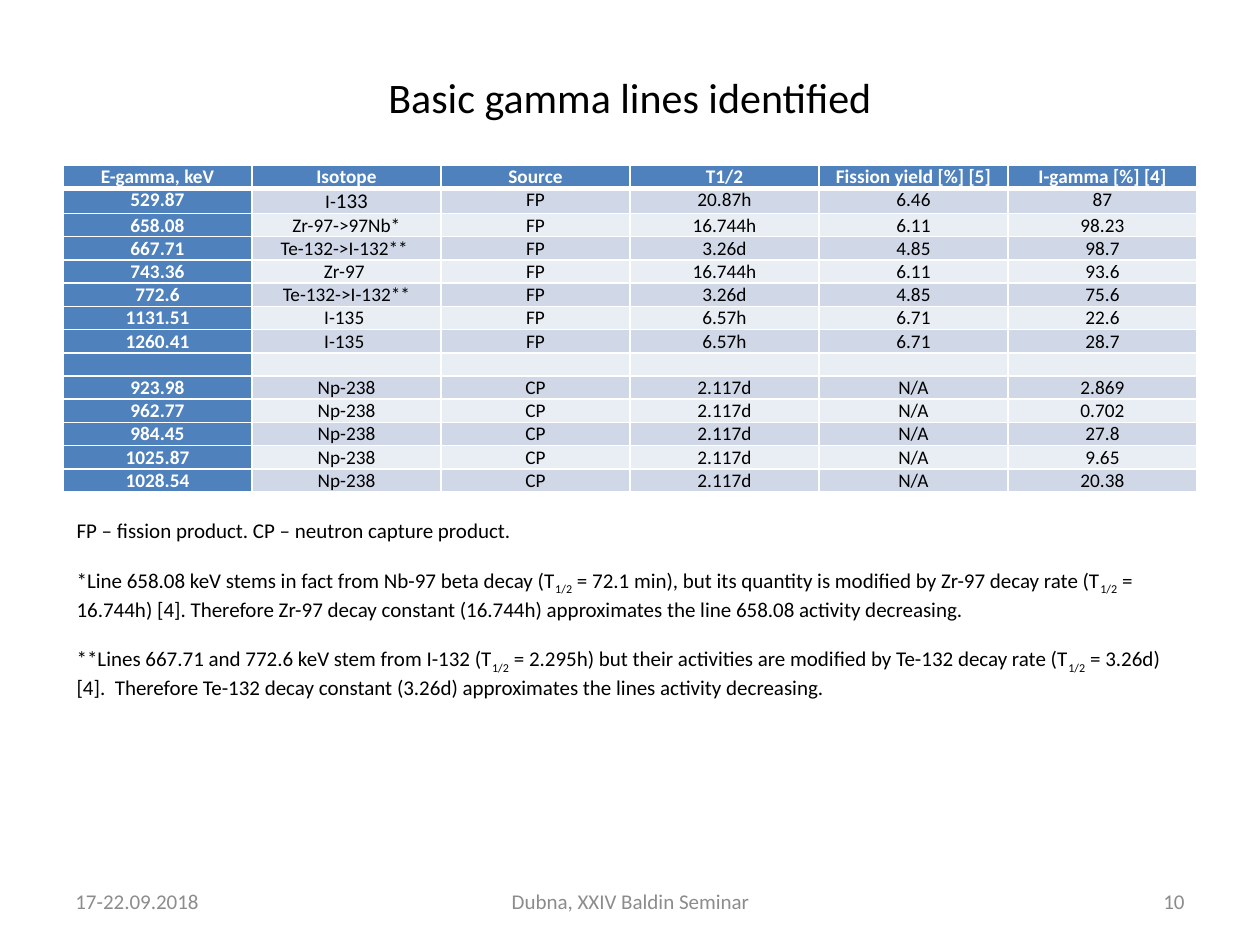
import pptx
import pptx.dml.color
import pptx.enum.text
import pptx.oxml.ns
import pptx.util
from lxml import etree

Inches = pptx.util.Inches
ALIGN = pptx.enum.text.PP_ALIGN
ANCHOR = pptx.enum.text.MSO_ANCHOR
THEME = {
    "font": "Calibri",
    "ink": "000000", "white": "FFFFFF", "muted": "8C8C8C",
    "accent": "4F81BD", "bands": ("D0D8E8", "E9EDF4"),
    "title": 24, "body": 12, "cell": 11,
}


def write(para, text, size=THEME["body"], color=THEME["ink"], bold=False,
          align=ALIGN.LEFT, marked_size=None, marked_baseline=None):
    para.alignment = align
    for index, piece in enumerate(text.split("|")):
        span = para.add_run()
        span.text = piece
        marked = index % 2 == 1
        span.font.name = THEME["font"]
        span.font.size = pptx.util.Pt(marked_size if marked and marked_size else size)
        span.font.bold = bold
        span.font.color.rgb = pptx.dml.color.RGBColor.from_string(color)
        if marked and marked_baseline:
            span.font._element.set("baseline", str(marked_baseline))


def add_border(cell, side, width):
    line = etree.SubElement(cell._tc.get_or_add_tcPr(), pptx.oxml.ns.qn(f"a:{side}"),
                            w=str(pptx.util.Pt(width)))
    fill = etree.SubElement(line, pptx.oxml.ns.qn("a:solidFill"))
    etree.SubElement(fill, pptx.oxml.ns.qn("a:srgbClr"), val=THEME["white"])


deck = pptx.Presentation()
deck.slide_width, deck.slide_height = Inches(10), Inches(7.5)
page = deck.slides.add_slide(deck.slide_layouts[6])

labels = [
    ("Basic gamma lines identified", 0.5, 0.3, 9, 0.93, THEME["title"], THEME["ink"], ALIGN.CENTER),
    ("17-22.09.2018", 0.5, 6.95, 2.33, 0.4, THEME["body"], THEME["muted"], ALIGN.LEFT),
    ("Dubna, XXIV Baldin Seminar", 3.42, 6.95, 3.17, 0.4, THEME["body"], THEME["muted"], ALIGN.CENTER),
    ("10", 7.17, 6.95, 2.33, 0.4, THEME["body"], THEME["muted"], ALIGN.RIGHT),
]
for text, left, top, width, height, size, color, align in labels:
    box = page.shapes.add_textbox(Inches(left), Inches(top), Inches(width), Inches(height))
    box.text_frame.word_wrap = True
    box.text_frame.vertical_anchor = ANCHOR.MIDDLE
    write(box.text_frame.paragraphs[0], text, size=size, color=color, align=align)

gamma_lines = [
    ("E-gamma, keV", "Isotope", "Source", "T1/2", "Fission yield [%] [5]", "I-gamma [%] [4]"),
    ("529.87", "I-|133", "FP", "20.87h", "6.46", "87"),
    ("658.08", "Zr-97->97Nb*", "FP", "16.744h", "6.11", "98.23"),
    ("667.71", "Te-132->I-132** ", "FP", "3.26d", "4.85", "98.7"),
    ("743.36", "Zr-97 ", "FP", "16.744h", "6.11", "93.6"),
    ("772.6", "Te-132->I-132**", "FP", "3.26d", "4.85", "75.6"),
    ("1131.51", "I-135 ", "FP", "6.57h", "6.71", "22.6"),
    ("1260.41", "I-135 ", "FP", "6.57h", "6.71", "28.7"),
    ("",) * 6,
]
capture_lines = [("923.98", "2.869"), ("962.77", "0.702"), ("984.45", "27.8"),
                 ("1025.87", "9.65"), ("1028.54", "20.38")]
for energy, intensity in capture_lines:
    gamma_lines.append((energy, "Np-238", "CP", "2.117d", "N/A", intensity))

table = page.shapes.add_table(len(gamma_lines), 6, Inches(0.5), Inches(1.31),
                              Inches(9), Inches(2.58)).table
for row, values in enumerate(gamma_lines):
    for column, value in enumerate(values):
        cell = table.cell(row, column)
        cell.margin_left = cell.margin_right = Inches(0.07)
        cell.margin_top = cell.margin_bottom = 0
        heading = row == 0 or column == 0
        for side in ("lnL", "lnR", "lnT", "lnB"):
            thick = (row, side) in ((0, "lnB"), (1, "lnT"))
            add_border(cell, side, 3 if thick else 1)
        cell.fill.solid()
        fill = THEME["accent"] if heading else THEME["bands"][(row - 1) % 2]
        cell.fill.fore_color.rgb = pptx.dml.color.RGBColor.from_string(fill)
        para = cell.text_frame.paragraphs[0]
        if value:
            write(para, value, size=THEME["cell"], bold=heading, align=ALIGN.CENTER,
                  color=THEME["white"] if heading else THEME["ink"],
                  marked_size=THEME["body"])
        else:
            etree.SubElement(para._p, pptx.oxml.ns.qn("a:endParaRPr"),
                             sz=str(THEME["cell"] * 100))

notes = [
    "FP – fission product. CP – neutron capture product.",
    "*Line 658.08 keV stems in fact from Nb-97 beta decay (T|1/2| = 72.1 min), but its quantity "
    "is modified by Zr-97 decay rate (T|1/2| = 16.744h) [4]. Therefore Zr-97 decay constant "
    "(16.744h) approximates the line 658.08 activity decreasing.",
    "**Lines 667.71 and 772.6 keV stem from I-132 (T|1/2| = 2.295h) but their activities are "
    "modified by Te-132 decay rate (T|1/2| = 3.26d) [4].  Therefore Te-132 decay constant "
    "(3.26d) approximates the lines activity decreasing.",
]
box = page.shapes.add_textbox(Inches(0.51), Inches(4.06), Inches(8.9), Inches(1.51))
box.text_frame.word_wrap = True
for index, note in enumerate(notes):
    para = box.text_frame.add_paragraph() if index else box.text_frame.paragraphs[0]
    para.space_before = pptx.util.Pt(14 if index else 0)
    write(para, note, marked_baseline=-25000)

deck.save("out.pptx")
